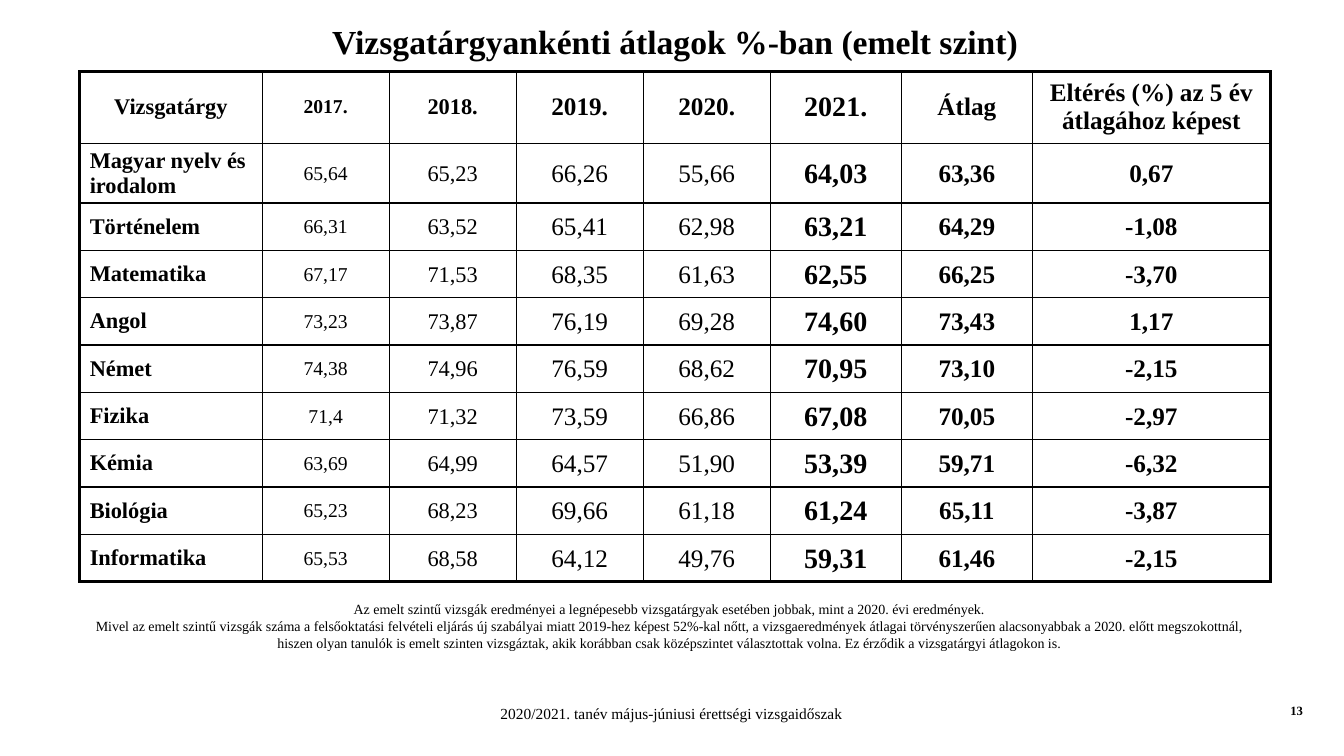
from lxml.etree import SubElement
from pptx import Presentation
from pptx.dml.color import RGBColor
from pptx.enum.text import MSO_ANCHOR, MSO_AUTO_SIZE, PP_ALIGN
from pptx.oxml.ns import qn
from pptx.util import Inches, Pt

FONT = "Times New Roman"
BLACK = "000000"
THIN, THICK = 1, 2.25
COLUMN_WIDTHS = [1.81, 1.26, 1.26, 1.26, 1.26, 1.3, 1.3, 2.36]
COLUMN_SIZES = [16, 14, 16, 18, 18, 20, 18, 18]
BOLD_COLUMNS = {0, 5, 6, 7}
ROW_HEIGHTS = [0.71, 0.59] + [0.47] * 8
RESULTS = [
    ["Vizsgatárgy", "2017.", "2018.", "2019.", "2020.", "2021.", "Átlag",
     "Eltérés (%) az 5 év átlagához képest"],
    ["Magyar nyelv és irodalom", "65,64", "65,23", "66,26", "55,66", "64,03", "63,36", "0,67"],
    ["Történelem", "66,31", "63,52", "65,41", "62,98", "63,21", "64,29", "-1,08"],
    ["Matematika", "67,17", "71,53", "68,35", "61,63", "62,55", "66,25", "-3,70"],
    ["Angol", "73,23", "73,87", "76,19", "69,28", "74,60", "73,43", "1,17"],
    ["Német", "74,38", "74,96", "76,59", "68,62", "70,95", "73,10", "-2,15"],
    ["Fizika", "71,4", "71,32", "73,59", "66,86", "67,08", "70,05", "-2,97"],
    ["Kémia", "63,69", "64,99", "64,57", "51,90", "53,39", "59,71", "-6,32"],
    ["Biológia", "65,23", "68,23", "69,66", "61,18", "61,24", "65,11", "-3,87"],
    ["Informatika", "65,53", "68,58", "64,12", "49,76", "59,31", "61,46", "-2,15"],
]
NOTES = [
    "Az emelt szintű vizsgák eredményei a legnépesebb vizsgatárgyak esetében jobbak, "
    "mint a 2020. évi eredmények.",
    "Mivel az emelt szintű vizsgák száma a felsőoktatási felvételi eljárás új szabályai miatt "
    "2019-hez képest 52%-kal nőtt, a vizsgaeredmények átlagai törvényszerűen alacsonyabbak "
    "a 2020. előtt megszokottnál, hiszen olyan tanulók is emelt szinten vizsgáztak, akik "
    "korábban csak középszintet választottak volna. Ez érződik a vizsgatárgyi átlagokon is.",
]


def format_text(frame, size, bold=False, align=PP_ALIGN.CENTER, color=BLACK):
    """Apply one font and alignment to all paragraphs of a frame."""
    for para in frame.paragraphs:
        para.alignment = align
        for span in para.runs:
            span.font.name = FONT
            span.font.size = Pt(size)
            span.font.bold = bold
            span.font.color.rgb = RGBColor.from_string(color)


def add_text(page, place, lines, size, bold=False, align=PP_ALIGN.CENTER, wrap=True):
    """Add a text box with one paragraph per line."""
    box = page.shapes.add_textbox(*map(Inches, place))
    frame = box.text_frame
    frame.word_wrap = wrap
    frame.auto_size = MSO_AUTO_SIZE.SHAPE_TO_FIT_TEXT
    frame.text = "\n".join(lines)
    format_text(frame, size, bold, align)


def set_title(page, text):
    """Fill and place the title placeholder."""
    title = page.shapes.title
    title.left, title.top, title.width, title.height = map(Inches, (0.79, 0.2, 11.81, 0.59))
    frame = title.text_frame
    frame.text = text
    frame.auto_size = MSO_AUTO_SIZE.NONE
    frame.vertical_anchor = MSO_ANCHOR.TOP
    frame.paragraphs[0].line_spacing = 0.9
    format_text(frame, 24, bold=True)


def set_borders(cell, widths, color=BLACK):
    """Draw the left, right, top and bottom borders of a cell."""
    properties = cell._tc.get_or_add_tcPr()
    for side, width in zip("LRTB", widths):
        line = SubElement(properties, qn(f"a:ln{side}"), w=str(Pt(width)))
        fill = SubElement(line, qn("a:solidFill"))
        SubElement(fill, qn("a:srgbClr"), val=color)


def fill_cell(cell, text, row, column):
    """Write and format one table cell by its row and column."""
    last_row, last_column = len(RESULTS) - 1, len(COLUMN_WIDTHS) - 1
    outer = (column == 0, column == last_column, row == 0, row == last_row)
    set_borders(cell, [THICK if edge else THIN for edge in outer])
    cell.fill.background()
    cell.vertical_anchor = MSO_ANCHOR.MIDDLE
    if row and column:
        cell.margin_left = cell.margin_right = cell.margin_top = Inches(0.01)
        cell.margin_bottom = 0
    cell.text_frame.text = text
    align = PP_ALIGN.LEFT if row and column == 0 else PP_ALIGN.CENTER
    bold = row == 0 or column in BOLD_COLUMNS
    format_text(cell.text_frame, COLUMN_SIZES[column], bold, align)


def add_results(page):
    """Add the table of yearly averages by subject."""
    table = page.shapes.add_table(
        len(RESULTS), len(COLUMN_WIDTHS),
        Inches(0.79), Inches(0.71), Inches(11.81), Inches(5.12)).table
    table.horz_banding = False
    for column, width in zip(table.columns, COLUMN_WIDTHS):
        column.width = Inches(width)
    for row, height in zip(table.rows, ROW_HEIGHTS):
        row.height = Inches(height)
    for row, values in enumerate(RESULTS):
        for column, text in enumerate(values):
            fill_cell(table.cell(row, column), text, row, column)


def main():
    """Build and save the slide."""
    deck = Presentation()
    deck.slide_width, deck.slide_height = Inches(13.33), Inches(7.5)
    page = deck.slides.add_slide(deck.slide_layouts[5])
    set_title(page, "Vizsgatárgyankénti átlagok %-ban (emelt szint)")
    add_results(page)
    add_text(page, (0.73, 5.91, 11.81, 0.59), NOTES, 10)
    add_text(page, (3.59, 6.94, 6.14, 0.29),
             ["2020/2021. tanév május-júniusi érettségi vizsgaidőszak"], 11)
    add_text(page, (12.7, 6.92, 0.33, 0.25), ["13"], 9, True, PP_ALIGN.LEFT, False)
    deck.save("out.pptx")


if __name__ == "__main__":
    main()
